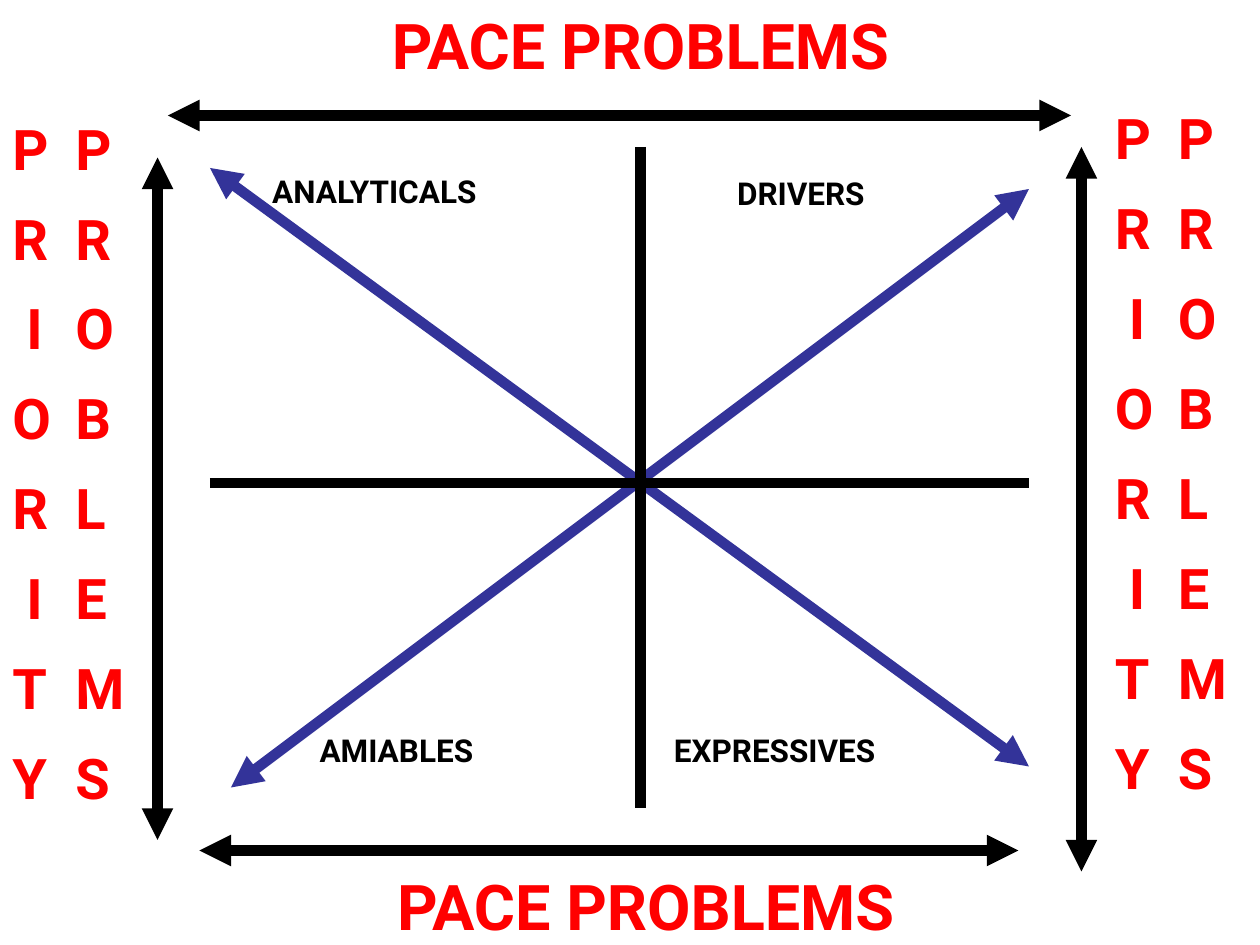
from dataclasses import dataclass

from lxml.etree import SubElement
from pptx import Presentation
from pptx.dml.color import RGBColor
from pptx.enum.shapes import MSO_CONNECTOR as Connector
from pptx.enum.text import MSO_ANCHOR as Anchor, MSO_AUTO_SIZE as AutoSize, PP_ALIGN as Align
from pptx.oxml.ns import qn
from pptx.util import Pt

BLACK = RGBColor(0x00, 0x00, 0x00)
RED = RGBColor(0xFF, 0x00, 0x00)
BLUE = RGBColor(0x33, 0x33, 0x99)
FONT = "Roboto"
INSET = 7.2


@dataclass(frozen=True)
class Arrow:
    start: tuple[float, float]
    end: tuple[float, float]
    color: RGBColor = BLACK
    heads: bool = True


@dataclass(frozen=True)
class Label:
    text: str
    left: float
    top: float
    width: float
    indent: float = 0


@dataclass(frozen=True)
class LetterRow:
    first: str
    second: str
    stop: float
    indent: float = 0


FRAME_ARROWS = [
    Arrow((612, 66), (96, 66)),
    Arrow((618, 84), (618, 498)),
    Arrow((90, 90), (90, 480)),
    Arrow((114, 486), (582, 486)),
]
INNER_LINES = [
    Arrow((120, 96), (588, 438), BLUE),
    Arrow((588, 108), (132, 450), BLUE),
    Arrow((366, 84), (366, 462), heads=False),
    Arrow((120, 276), (588, 276), heads=False),
]
STYLES = [
    Label("ANALYTICALS", 126, 95, 222, 22.4),
    Label("AMIABLES", 144, 414, 192, 31.4),
    Label("EXPRESSIVES", 378, 414, 192),
    Label("DRIVERS", 396, 96, 198, 18),
]
PRIORITY_ROWS = [
    LetterRow("P", "P", 36.6),
    LetterRow("R", "R", 36.3),
    LetterRow("I", "O", 33.4, 8),
    LetterRow("O", "B", 38),
    LetterRow("R", "L", 36.3),
    LetterRow("I", "E", 41.4, 8),
    LetterRow("T", "M", 35.8),
    LetterRow("Y", "S", 35.9),
]


def format_font(para, size: float, color: RGBColor) -> None:
    font = para.font
    font.name, font.size, font.bold = FONT, Pt(size), True
    font.color.rgb = color


def prepare_frame(box, indent: float = 0):
    """Give the box the common insets, wrapping and top anchor."""
    frame = box.text_frame
    frame.word_wrap = True
    frame.auto_size = AutoSize.NONE
    frame.vertical_anchor = Anchor.TOP
    frame.margin_left, frame.margin_right = Pt(INSET + indent), Pt(INSET)
    frame.margin_top = frame.margin_bottom = Pt(3.6)
    return frame


def add_box(page, left: float, top: float, width: float, height: float):
    return page.shapes.add_textbox(Pt(left), Pt(top), Pt(width), Pt(height))


def draw_arrow(page, arrow: Arrow) -> None:
    line = page.shapes.add_connector(
        Connector.STRAIGHT, *map(Pt, arrow.start + arrow.end))
    line.line.color.rgb = arrow.color
    line.line.width = Pt(6)
    if arrow.heads:
        outline = line.line._get_or_add_ln()
        for end in ("a:headEnd", "a:tailEnd"):
            SubElement(outline, qn(end), type="triangle")
    SubElement(line._element.spPr, qn("a:effectLst"))


def write_heading(box) -> None:
    para = prepare_frame(box).paragraphs[0]
    para.text = "PACE PROBLEMS"
    para.alignment = Align.CENTER
    para.line_spacing = 1.0
    format_font(para, 36, RED)


def draw_label(page, label: Label) -> None:
    box = add_box(page, label.left, label.top, label.width, 36)
    para = prepare_frame(box, label.indent).paragraphs[0]
    para.text = label.text
    format_font(para, 18, BLACK)


def draw_letters(page, left: float, top: float, width: float, height: float) -> None:
    """Write the two downward words as rows of letters set by tab stops."""
    frame = prepare_frame(add_box(page, left, top, width, height))
    for index, row in enumerate(PRIORITY_ROWS):
        para = frame.add_paragraph() if index else frame.paragraphs[0]
        para.text = f"{row.first}\t{row.second}"
        properties = para._p.get_or_add_pPr()
        properties.set("marL", "0")
        properties.set("indent", str(Pt(row.indent)))
        stops = SubElement(properties, qn("a:tabLst"))
        SubElement(stops, qn("a:tab"), pos=str(Pt(row.stop)), algn="l")
        para.line_spacing = 0.9
        if index:
            para.space_before = Pt(16.8)
        format_font(para, 32, RED)


def main() -> None:
    deck = Presentation()
    deck.slide_width, deck.slide_height = Pt(720), Pt(540)
    page = deck.slides.add_slide(deck.slide_layouts[5])

    title = page.shapes.title
    title.left, title.top, title.width, title.height = map(Pt, (192, 0, 348, 50.4))
    write_heading(title)
    write_heading(add_box(page, 186, 492, 366, 94))

    draw_letters(page, 630, 60, 90, 418)
    draw_letters(page, 0, 66, 84, 461)
    for arrow in FRAME_ARROWS:
        draw_arrow(page, arrow)
    for label in STYLES:
        draw_label(page, label)
    for line in INNER_LINES:
        draw_arrow(page, line)

    deck.save("out.pptx")


if __name__ == "__main__":
    main()
